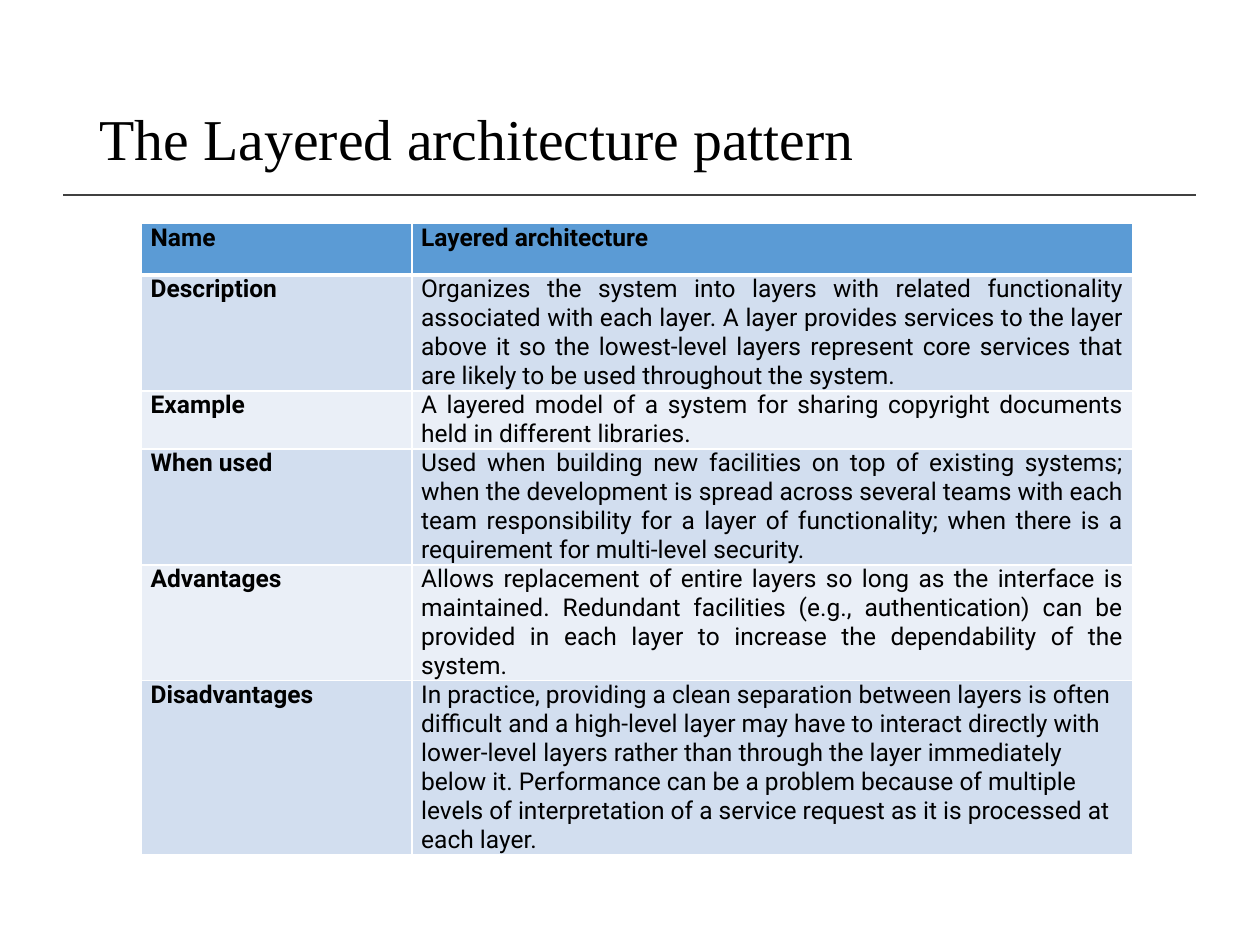
from dataclasses import dataclass

from lxml.etree import SubElement
from pptx import Presentation
from pptx.dml.color import RGBColor
from pptx.enum.shapes import MSO_CONNECTOR
from pptx.enum.text import MSO_ANCHOR, PP_ALIGN
from pptx.oxml.ns import qn
from pptx.slide import Slide
from pptx.table import _Cell
from pptx.util import Pt

BLACK = RGBColor(0x00, 0x00, 0x00)
WHITE = RGBColor(0xFF, 0xFF, 0xFF)
RULE_GREY = RGBColor(0x40, 0x40, 0x40)
HEADER_BLUE = RGBColor(0x5B, 0x9B, 0xD5)
BANDS = (RGBColor(0xD2, 0xDE, 0xEF), RGBColor(0xEA, 0xEF, 0xF7))

COLUMN_WIDTHS = (154.6, 411.6)


@dataclass(frozen=True)
class Aspect:
    name: str
    text: str
    height: float
    align: PP_ALIGN = PP_ALIGN.JUSTIFY


ASPECTS = (
    Aspect("Name", "Layered architecture", 29.4),
    Aspect("Description",
           "Organizes the system into layers with related functionality associated "
           "with each layer. A layer provides services to the layer above it so the "
           "lowest-level layers represent core services that are likely to be used "
           "throughout the system. ", 66),
    Aspect("Example",
           "A layered model of a system for sharing copyright documents held in "
           "different libraries.", 33),
    Aspect("When used",
           "Used when building new facilities on top of existing systems; when the "
           "development is spread across several teams with each team responsibility "
           "for a layer of functionality; when there is a requirement for multi-level "
           "security.", 66),
    Aspect("Advantages",
           "Allows replacement of entire layers so long as the interface is "
           "maintained. Redundant facilities (e.g., authentication) can be provided "
           "in each layer to increase the dependability of the system.", 66),
    Aspect("Disadvantages",
           "In practice, providing a clean separation between layers is often "
           "difficult and a high-level layer may have to interact directly with "
           "lower-level layers rather than through the layer immediately below it. "
           "Performance can be a problem because of multiple levels of interpretation "
           "of a service request as it is processed at each layer.", 99, PP_ALIGN.LEFT),
)


def add_title(slide: Slide, text: str) -> None:
    title = slide.shapes.title
    title.left, title.top, title.width, title.height = (
        Pt(49.7), Pt(28.8), Pt(620.6), Pt(104.4))
    frame = title.text_frame
    frame.text = text
    frame.word_wrap = True
    frame.vertical_anchor = MSO_ANCHOR.MIDDLE
    heading = frame.paragraphs[0]
    heading.alignment = PP_ALIGN.LEFT
    heading.line_spacing = 0.9
    heading.font.name = "Times New Roman"
    heading.font.size = Pt(33)
    heading.font.color.rgb = BLACK


def add_title_rule(slide: Slide) -> None:
    rule = slide.shapes.add_connector(
        MSO_CONNECTOR.STRAIGHT, Pt(36), Pt(111.5), Pt(683.3), Pt(111.5))
    rule.line.color.rgb = RULE_GREY
    rule.line.width = Pt(1)
    SubElement(rule._element.spPr, qn("a:effectLst"))


def set_borders(cell: _Cell, top: float, bottom: float) -> None:
    properties = cell._tc.get_or_add_tcPr()
    widths = {"a:lnL": 1, "a:lnR": 1, "a:lnT": top, "a:lnB": bottom}
    for position, (tag, width) in enumerate(widths.items()):
        border = SubElement(properties, qn(tag), w=str(Pt(width)))
        fill = SubElement(border, qn("a:solidFill"))
        SubElement(fill, qn("a:srgbClr"), val=str(WHITE))
        properties.insert(position, border)  # borders come before the fill


def fill_cell(cell: _Cell, text: str, color: RGBColor, bold: bool,
              align: PP_ALIGN) -> None:
    cell.fill.solid()
    cell.fill.fore_color.rgb = color
    cell.margin_left = cell.margin_right = Pt(5.2)
    cell.margin_top = cell.margin_bottom = Pt(0)
    cell.vertical_anchor = MSO_ANCHOR.TOP
    cell.text = text
    paragraph = cell.text_frame.paragraphs[0]
    paragraph.alignment = align
    paragraph.font.name = "Roboto"
    paragraph.font.size = Pt(14)
    paragraph.font.bold = bold
    paragraph.font.color.rgb = BLACK


def add_pattern_table(slide: Slide) -> None:
    table = slide.shapes.add_table(
        len(ASPECTS), len(COLUMN_WIDTHS), Pt(80.9), Pt(127.7),
        Pt(sum(COLUMN_WIDTHS)), Pt(sum(aspect.height for aspect in ASPECTS))).table
    for column, width in zip(table.columns, COLUMN_WIDTHS):
        column.width = Pt(width)
    for index, aspect in enumerate(ASPECTS):
        table.rows[index].height = Pt(aspect.height)
        is_header = index == 0
        color = HEADER_BLUE if is_header else BANDS[(index - 1) % 2]
        name_cell, text_cell = table.cell(index, 0), table.cell(index, 1)
        fill_cell(name_cell, aspect.name, color, True, PP_ALIGN.JUSTIFY)
        fill_cell(text_cell, aspect.text, color, is_header, aspect.align)
        for cell in (name_cell, text_cell):
            # A thick line sets the header off from the body
            set_borders(cell, top=3 if index == 1 else 1, bottom=3 if is_header else 1)


def main() -> None:
    presentation = Presentation()
    presentation.slide_width, presentation.slide_height = Pt(720), Pt(540)
    slide = presentation.slides.add_slide(presentation.slide_layouts[5])

    # Heading
    add_title_rule(slide)
    add_title(slide, "The Layered architecture pattern")

    # Pattern description
    add_pattern_table(slide)

    presentation.save("out.pptx")


if __name__ == "__main__":
    main()
